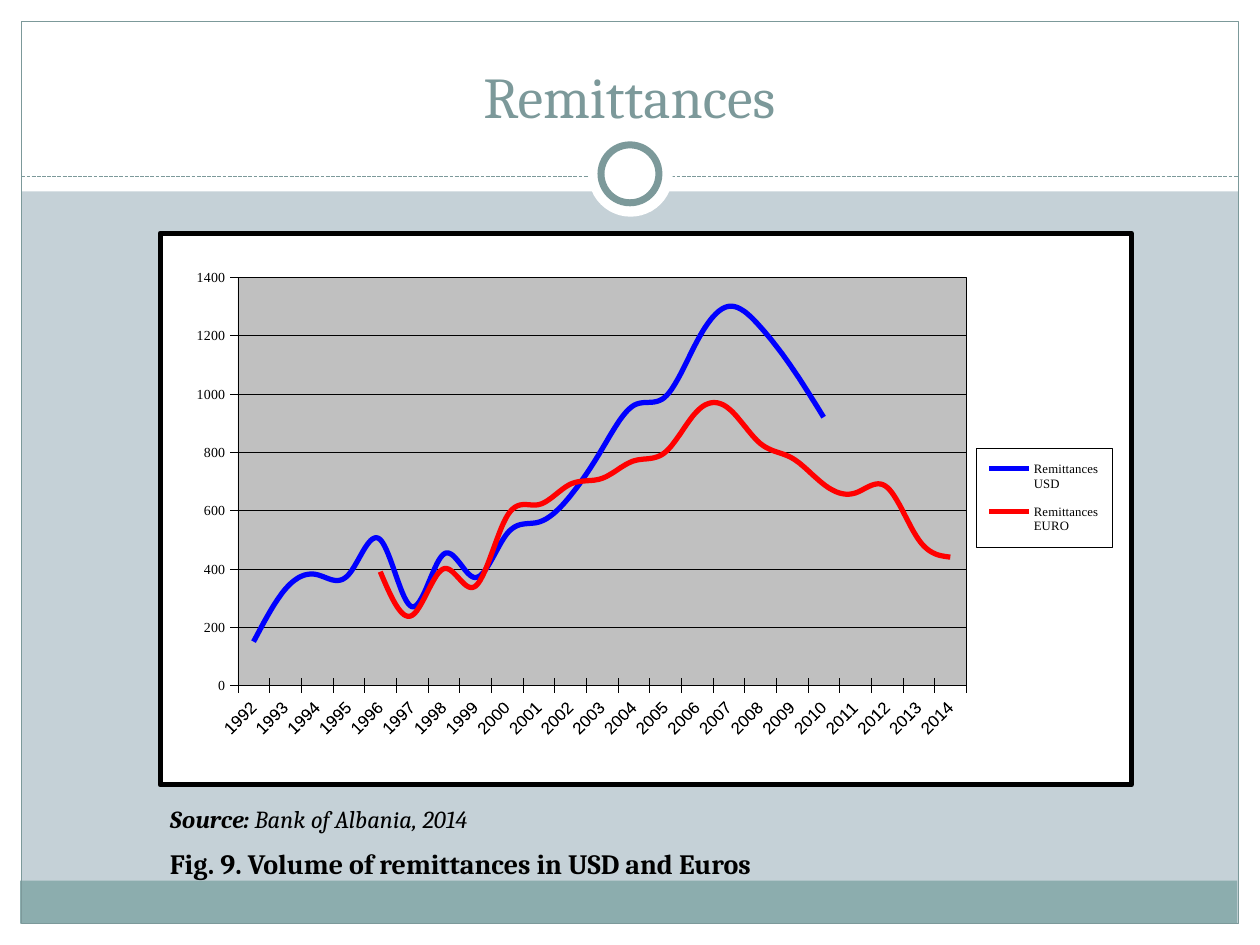
from lxml import etree
from pptx import Presentation
from pptx.chart.data import CategoryChartData
from pptx.dml.color import RGBColor
from pptx.enum.chart import XL_CHART_TYPE, XL_LEGEND_POSITION, XL_MARKER_STYLE, XL_TICK_MARK
from pptx.enum.dml import MSO_LINE
from pptx.enum.shapes import MSO_CONNECTOR, MSO_SHAPE
from pptx.enum.text import MSO_ANCHOR, PP_ALIGN
from pptx.oxml import parse_xml
from pptx.oxml.ns import nsdecls, qn
from pptx.util import Inches, Pt

RECTANGLE, OVAL = MSO_SHAPE.RECTANGLE, MSO_SHAPE.OVAL
STRAIGHT = MSO_CONNECTOR.STRAIGHT
DASHED = MSO_LINE.SQUARE_DOT
CENTER, JUSTIFY = PP_ALIGN.CENTER, PP_ALIGN.JUSTIFY
MIDDLE, BOTTOM = MSO_ANCHOR.MIDDLE, MSO_ANCHOR.BOTTOM
CROSS, NO_MARKER = XL_TICK_MARK.CROSS, XL_MARKER_STYLE.NONE
LINE_CHART, LEGEND_RIGHT = XL_CHART_TYPE.LINE, XL_LEGEND_POSITION.RIGHT

COLORS = {
    "background": "C5D1D7",
    "white": "FFFFFF",
    "black": "000000",
    "accent": "7C999A",
    "footer": "8CADAE",
    "plot": "C0C0C0",
    "usd": "0000FF",
    "euro": "FF0000",
}

YEARS = [str(year) for year in range(1992, 2015)]
USD = [150, 330, 380, 380, 500, 270, 450, 370, 520, 560, 650, 810,
       960, 990, 1180, 1300, 1230, 1090, 920] + [None] * 4
EURO = [None] * 4 + [390, 240, 400, 340, 580, 620, 690, 710, 770, 800,
                     940, 950, 830, 780, 690, 660, 680, 500, 440]


def rgb(name):
    """Return a palette colour."""
    return RGBColor.from_string(COLORS[name])


def style_line(line, color, width):
    """Give a line its colour and width in points."""
    line.color.rgb = rgb(color)
    line.width = Pt(width)


def style_font(font, family, size, color="black"):
    """Give a font its family, size and colour."""
    font.name = family
    font.size = Pt(size)
    font.color.rgb = rgb(color)


def add_panel(slide, box, fill=None, outline=None, width=0.75, kind=RECTANGLE):
    """Add a frame shape with an optional fill and outline."""
    panel = slide.shapes.add_shape(kind, *map(Inches, box))
    panel.shadow.inherit = False
    if fill:
        panel.fill.solid()
        panel.fill.fore_color.rgb = rgb(fill)
    else:
        panel.fill.background()
    if outline:
        style_line(panel.line, outline, width)
    else:
        panel.line.fill.background()


def add_divider(slide, left, right, y):
    """Add the dashed line below the title."""
    divider = slide.shapes.add_connector(
        STRAIGHT, Inches(left), Inches(y), Inches(right), Inches(y))
    style_line(divider.line, "accent", 0.75)
    divider.line.dash_style = DASHED
    etree.SubElement(divider._element.spPr, qn("a:effectLst"))


def add_text(slide, box, pieces, size, color="black", align=JUSTIFY, anchor=MIDDLE, wrap=True):
    """Add one paragraph made of (text, bold, italic) pieces."""
    frame = slide.shapes.add_textbox(*map(Inches, box)).text_frame
    frame.word_wrap = wrap
    frame.vertical_anchor = anchor
    paragraph = frame.paragraphs[0]
    paragraph.alignment = align
    for text, bold, italic in pieces:
        run = paragraph.add_run()
        run.text = text
        style_font(run.font, "Cambria", size, color)
        run.font.bold, run.font.italic = bold, italic


def area_format(fill, width):
    """Return chart formatting with a fill and a black border."""
    return parse_xml(
        f'<c:spPr {nsdecls("c", "a")}><a:solidFill><a:srgbClr val="{COLORS[fill]}"/></a:solidFill>'
        f'<a:ln w="{Pt(width)}"><a:solidFill><a:srgbClr val="{COLORS["black"]}"/></a:solidFill>'
        '</a:ln></c:spPr>')


def manual_layout(x, y, w, h, inner=False):
    """Return a chart layout in fractions of the chart area."""
    target = '<c:layoutTarget val="inner"/>' if inner else ""
    modes = '<c:xMode val="edge"/><c:yMode val="edge"/>'
    place = "".join(f'<c:{key} val="{value}"/>' for key, value in zip("xywh", (x, y, w, h)))
    return parse_xml(f'<c:layout {nsdecls("c")}><c:manualLayout>{target}{modes}{place}'
                     '</c:manualLayout></c:layout>')


def style_axis(axis, family, size):
    """Format an axis line, its ticks and its labels."""
    axis.major_tick_mark = CROSS
    style_line(axis.format.line, "black", 0.25)
    style_font(axis.tick_labels.font, family, size)


def style_legend(chart):
    """Place the framed legend to the right of the plot."""
    chart.has_legend = True
    legend = chart.legend
    legend.position = LEGEND_RIGHT
    legend.include_in_layout = False
    style_font(legend.font, "Times New Roman", 7.3)
    element = legend._element
    for old in element.findall(qn("c:layout")):
        element.remove(old)
    element.find(qn("c:legendPos")).addnext(manual_layout(0.84, 0.39, 0.14, 0.18))
    element.find(qn("c:overlay")).addnext(area_format("white", 0.25))


def style_areas(chart):
    """Format the chart area and place the plot area."""
    space = chart._chartSpace
    space.find(qn("c:chart")).addnext(area_format("white", 3))
    plot_area = space.find(".//" + qn("c:plotArea"))
    for old in plot_area.findall(qn("c:layout")):
        plot_area.remove(old)
    plot_area.insert(0, manual_layout(0.08, 0.08, 0.75, 0.74, inner=True))
    plot_area.append(area_format("plot", 0.25))


def add_remittance_chart(slide, box):
    """Add the line chart of remittances by year."""
    data = CategoryChartData()
    data.categories = YEARS
    data.add_series("Remittances USD", USD)
    data.add_series("Remittances EURO", EURO)
    chart = slide.shapes.add_chart(LINE_CHART, *map(Inches, box), data).chart
    chart.has_title = False
    style_font(chart.font, "Arial", 9.8)
    chart.plots[0].vary_by_categories = False
    for series, color in zip(chart.plots[0].series, ("usd", "euro")):
        series.smooth = True
        series.marker.style = NO_MARKER
        style_line(series.format.line, color, 3)

    years, amounts = chart.category_axis, chart.value_axis
    style_axis(years, "Arial", 9.8)
    years._element.find(".//" + qn("a:bodyPr")).set("rot", "-2700000")
    style_axis(amounts, "Times New Roman", 8)
    amounts.minimum_scale, amounts.maximum_scale, amounts.major_unit = 0, 1400, 200
    amounts.has_major_gridlines = True
    style_line(amounts.major_gridlines.format.line, "black", 0.25)
    style_legend(chart)
    style_areas(chart)


def add_frame(slide):
    """Add the margins, footer band, divider and ring."""
    for margin in ((0, 7.33, 10, 0.17), (0, 0, 10, 1.52), (0, 0, 0.17, 7.5), (9.83, 0, 0.17, 7.5)):
        add_panel(slide, margin, "white")
    add_panel(slide, (0.16, 6.99, 9.66, 0.34), "footer")
    add_panel(slide, (0.17, 0.17, 9.66, 7.16), outline="accent")
    add_divider(slide, 0.17, 9.83, 1.4)
    add_panel(slide, (4.67, 1.05, 0.67, 0.67), "white", kind=OVAL)
    add_panel(slide, (4.77, 1.15, 0.46, 0.46), "white", "accent", 4, OVAL)


def main():
    """Build and save the remittances slide."""
    deck = Presentation()
    deck.slide_width, deck.slide_height = Inches(10), Inches(7.5)
    slide = deck.slides.add_slide(deck.slide_layouts[6])
    slide.background.fill.solid()
    slide.background.fill.fore_color.rgb = rgb("background")
    add_frame(slide)
    add_text(slide, (0.33, 0.25, 9.33, 0.83), [("Remittances", False, False)],
             33, "accent", CENTER, BOTTOM)
    add_remittance_chart(slide, (1.25, 1.83, 7.75, 4.42))
    add_text(slide, (1.25, 6.67, 5.76, 0.37),
             [("Fig. 9. Volume of remittances in USD and Euros", True, False)], 16, wrap=False)
    add_text(slide, (1.25, 6.33, 5.08, 0.34),
             [("Source: ", True, True), ("Bank of Albania, 2014", False, True)], 14)
    deck.save("out.pptx")


if __name__ == "__main__":
    main()
